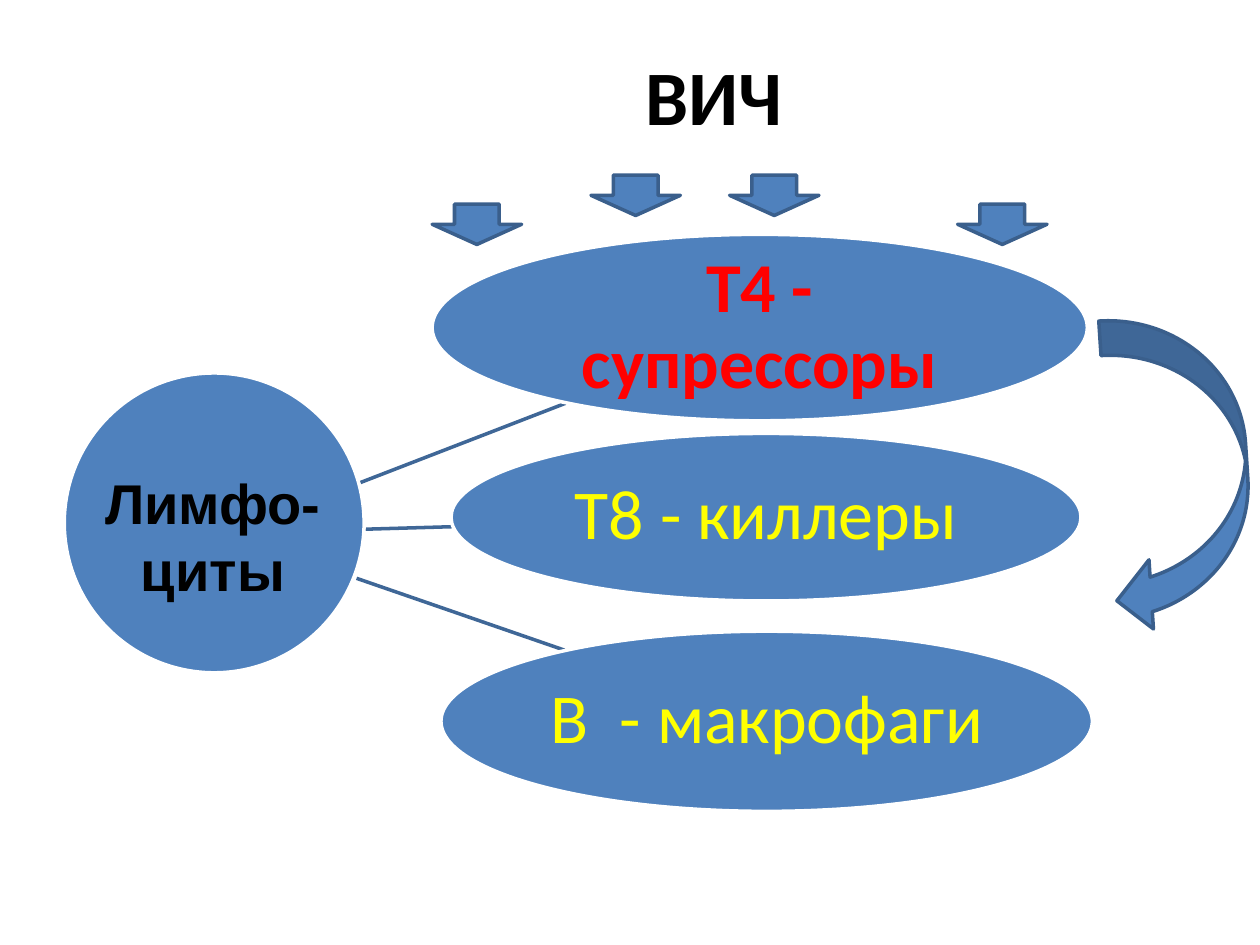
"""Build the slide on HIV and the lymphocyte types."""
from pptx import Presentation
from pptx import util as u
from pptx.dml.color import RGBColor
from pptx.enum import shapes, text
from pptx.oxml.ns import qn
from lxml import etree

BLUE, DARK, WHITE = "4F81BD", "3A5F8C", "FFFFFF"
TITLE = ("ВИЧ", (3.58, 0.28, 4.17, 0.95))
ROOT = ("Лимфо-циты", (0.35, 3.67, 2.68, 1.18))
DISC = (0.51, 2.96, 2.38, 2.38)
CELLS = [
    ("Т4 - супрессоры", (3.43, 1.86, 5.2, 1.48), "FF0000", True),
    ("Т8 - киллеры", (3.58, 3.44, 5, 1.33), "FFFF00", False),
    ("В  - макрофаги", (3.5, 5.01, 5.17, 1.43), "FFFF00", False),
]
LINKS = [((2.86, 3.83), (4.49, 3.2)), ((2.9, 4.2), (3.6, 4.18)),
         ((2.83, 4.59), (4.48, 5.16))]
DROPS = [(3.43, 1.62), (4.69, 1.39), (5.79, 1.39), (7.6, 1.62)]
DROP = (0.71, 0.32)
CURVE = (8.1, 3.21, 2.5, 1.1)


def tint(code):
    return RGBColor.from_string(code)


def inch(vals):
    return [u.Inches(v) for v in vals]


def write(shape, words, size=40, font="Calibri", color="000000", bold=True,
          inset=0.03, space=None, mid=True):
    frame = shape.text_frame
    frame.word_wrap = True
    frame.vertical_anchor = text.MSO_ANCHOR.MIDDLE if mid else text.MSO_ANCHOR.TOP
    if inset is not None:
        frame.margin_left = frame.margin_right = u.Inches(inset)
        frame.margin_top = frame.margin_bottom = u.Inches(inset)
    para = frame.paragraphs[0]
    para.alignment = text.PP_ALIGN.CENTER
    if space:
        para.line_spacing = space
    run = para.add_run()
    run.text = words
    run.font.size, run.font.name, run.font.bold = u.Pt(size), font, bold
    run.font.color.rgb = tint(color)


def draw(slide, kind, box, edge):
    shape = slide.shapes.add_shape(kind, *inch(box))
    shape.shadow.inherit = False
    shape.fill.solid()
    shape.fill.fore_color.rgb = tint(BLUE)
    shape.line.color.rgb = tint(edge)
    shape.line.width = u.Pt(2)
    return shape


def link(slide, start, end):
    line = slide.shapes.add_connector(shapes.MSO_CONNECTOR.STRAIGHT,
                                      *inch(start + end))
    line.line.color.rgb = tint("3F6797")
    line.line.width = u.Pt(2)
    etree.SubElement(line._element.spPr, qn("a:effectLst"))


def main():
    deck = Presentation()
    deck.slide_width, deck.slide_height = inch((10, 7.5))
    slide = deck.slides.add_slide(deck.slide_layouts[6])
    kinds = shapes.MSO_SHAPE

    words, box = TITLE
    write(slide.shapes.add_textbox(*inch(box)), words, size=44, inset=None)
    for start, end in LINKS:
        link(slide, start, end)
    draw(slide, kinds.OVAL, DISC, WHITE)
    for words, box, color, bold in CELLS:
        cell = draw(slide, kinds.OVAL, box, WHITE)
        write(cell, words, color=color, bold=bold, space=0.9)
    words, box = ROOT
    write(slide.shapes.add_textbox(*inch(box)), words, size=32, font="Arial",
          inset=None, mid=False)
    draw(slide, kinds.CURVED_DOWN_ARROW, CURVE, DARK).rotation = 86.3
    for spot in DROPS:
        draw(slide, kinds.DOWN_ARROW, spot + DROP, DARK)
    deck.save("out.pptx")


if __name__ == "__main__":
    main()
